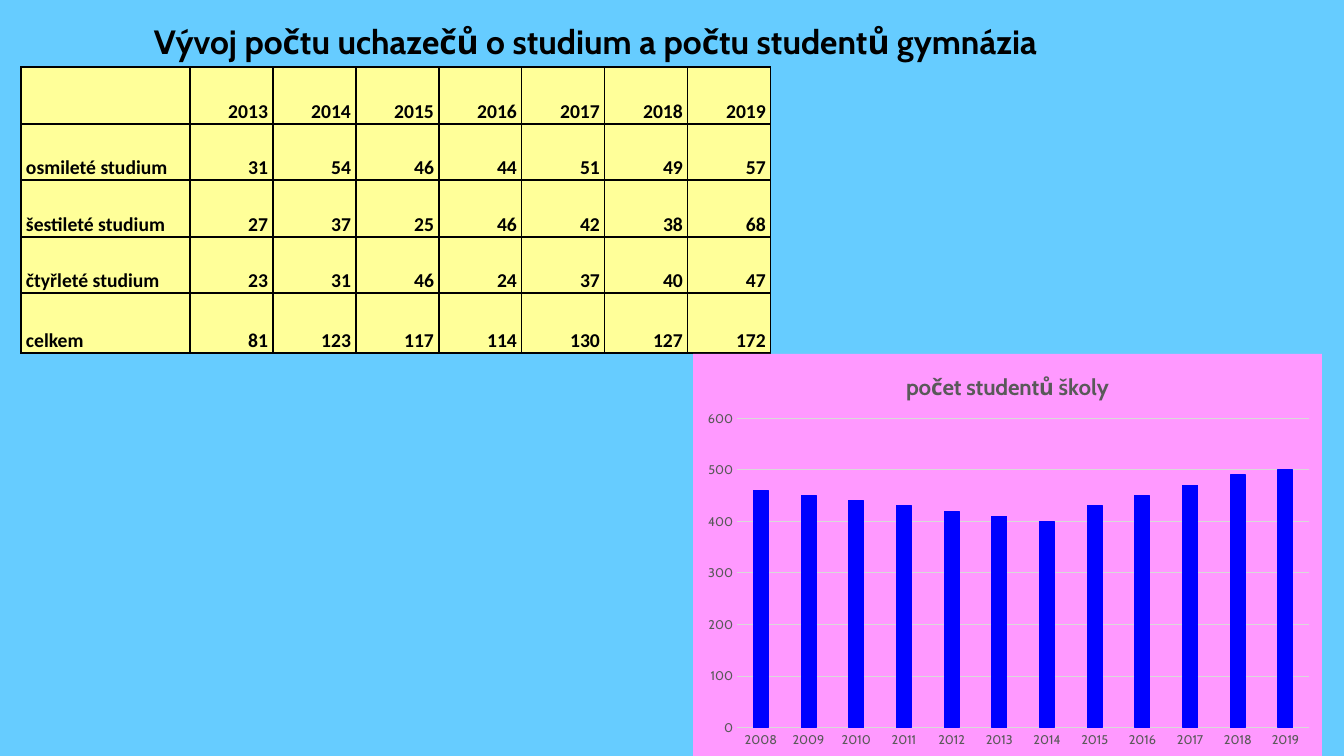
from pptx import Presentation
from pptx.chart.data import CategoryChartData
from pptx.dml.color import RGBColor
from pptx.enum.chart import XL_CHART_TYPE, XL_TICK_MARK
from pptx.enum.text import MSO_ANCHOR, MSO_AUTO_SIZE, PP_ALIGN
from pptx.oxml import parse_xml
from pptx.oxml.ns import nsdecls
from pptx.util import Emu, Pt

SKY = RGBColor(0x66, 0xCC, 0xFF)
YELLOW = RGBColor(0xFF, 0xFF, 0x99)
PINK = RGBColor(0xFF, 0x99, 0xFF)
BLUE = RGBColor(0x00, 0x00, 0xFF)
BLACK = RGBColor(0x00, 0x00, 0x00)
GREY = RGBColor(0x59, 0x59, 0x59)
PALE = RGBColor(0xD9, 0xD9, 0xD9)


def px(n):
    return Emu(round(n * 914400 / 100.8))


def style(font, name, size, color, bold):
    font.name, font.size, font.bold = name, Pt(size), bold
    font.color.rgb = color


# Slide
deck = Presentation()
deck.slide_width, deck.slide_height = px(1344), px(756)
slide = deck.slides.add_slide(deck.slide_layouts[6])
slide.background.fill.solid()
slide.background.fill.fore_color.rgb = SKY

# Title
box = slide.shapes.add_textbox(px(144), px(16), px(961), px(50))
frame = box.text_frame
frame.word_wrap = False
frame.auto_size = MSO_AUTO_SIZE.SHAPE_TO_FIT_TEXT
run = frame.paragraphs[0].add_run()
run.text = "Vývoj počtu uchazečů o studium a počtu studentů gymnázia"
style(run.font, "Cabin", 24, BLACK, True)

# Table of applicants
rows = [
    ("", *range(2013, 2020)),
    ("osmileté studium", 31, 54, 46, 44, 51, 49, 57),
    ("šestileté studium", 27, 37, 25, 46, 42, 38, 68),
    ("čtyřleté studium", 23, 31, 46, 24, 37, 40, 47),
    ("celkem", 81, 123, 117, 114, 130, 127, 172),
]
widths = [169] + [83] * 7
heights = [57, 56, 57, 56, 60]
table = slide.shapes.add_table(len(rows), len(widths), px(21), px(67),
                               px(sum(widths)), px(sum(heights))).table
for col, width in zip(table.columns, widths):
    col.width = px(width)
for y, row in enumerate(rows):
    table.rows[y].height = px(heights[y])
    for x, value in enumerate(row):
        cell = table.cell(y, x)
        cell.margin_left = cell.margin_right = px(5)
        cell.margin_top = cell.margin_bottom = 0
        cell.vertical_anchor = MSO_ANCHOR.BOTTOM
        para = cell.text_frame.paragraphs[0]
        para.alignment = PP_ALIGN.RIGHT if x else PP_ALIGN.LEFT
        if value:
            run = para.add_run()
            run.text = str(value)
            style(run.font, "Calibri", 14, BLACK, True)
        # Borders come before the fill
        props = cell._tc.get_or_add_tcPr()
        for side in ("lnL", "lnR", "lnT", "lnB"):
            props.append(parse_xml(
                f'<a:{side} {nsdecls("a")} w="12700"><a:solidFill>'
                f'<a:srgbClr val="{BLACK}"/></a:solidFill></a:{side}>'))
        cell.fill.solid()
        cell.fill.fore_color.rgb = YELLOW

# Chart of students
data = CategoryChartData()
data.categories = [str(year) for year in range(2008, 2020)]
data.add_series("Series 1", (460, 450, 440, 430, 420, 410,
                             400, 430, 450, 470, 490, 500))
chart = slide.shapes.add_chart(XL_CHART_TYPE.COLUMN_CLUSTERED, px(693), px(354),
                               px(629), px(402), data).chart
style(chart.font, "Cabin", 10, BLACK, False)
chart.has_legend = False
chart.has_title = True
run = chart.chart_title.text_frame.paragraphs[0].add_run()
run.text = "počet studentů školy"
style(run.font, "Cabin", 16, GREY, True)
chart.chart_title.include_in_layout = False

# Columns
plot = chart.plots[0]
plot.gap_width, plot.overlap = 219, -27
plot.vary_by_categories = False
bars = plot.series[0].format
bars.fill.solid()
bars.fill.fore_color.rgb = BLUE
bars.line.color.rgb = BLUE
bars.line.width = Pt(0.75)

# Axes
years, counts = chart.category_axis, chart.value_axis
for axis in (years, counts):
    axis.major_tick_mark = axis.minor_tick_mark = XL_TICK_MARK.NONE
    style(axis.tick_labels.font, "Cabin", 9, GREY, False)
counts.minimum_scale, counts.maximum_scale, counts.major_unit = 0, 600, 100
counts.format.line.fill.background()
counts.has_major_gridlines = True
for line in (years.format.line, counts.major_gridlines.format.line):
    line.color.rgb = PALE
    line.width = Pt(0.75)

# Plot area place and chart background
area = chart._chartSpace.chart.plotArea
for old in area.findall("{*}layout"):
    area.remove(old)
area.insert(0, parse_xml(
    f'<c:layout {nsdecls("c")}><c:manualLayout><c:layoutTarget val="inner"/>'
    '<c:xMode val="edge"/><c:yMode val="edge"/><c:x val="0.07"/>'
    '<c:y val="0.16"/><c:w val="0.91"/><c:h val="0.77"/>'
    '</c:manualLayout></c:layout>'))
chart._chartSpace.chart.addnext(parse_xml(
    f'<c:spPr {nsdecls("c", "a")}><a:solidFill><a:srgbClr val="{PINK}"/>'
    '</a:solidFill><a:ln><a:noFill/></a:ln></c:spPr>'))

deck.save("out.pptx")
